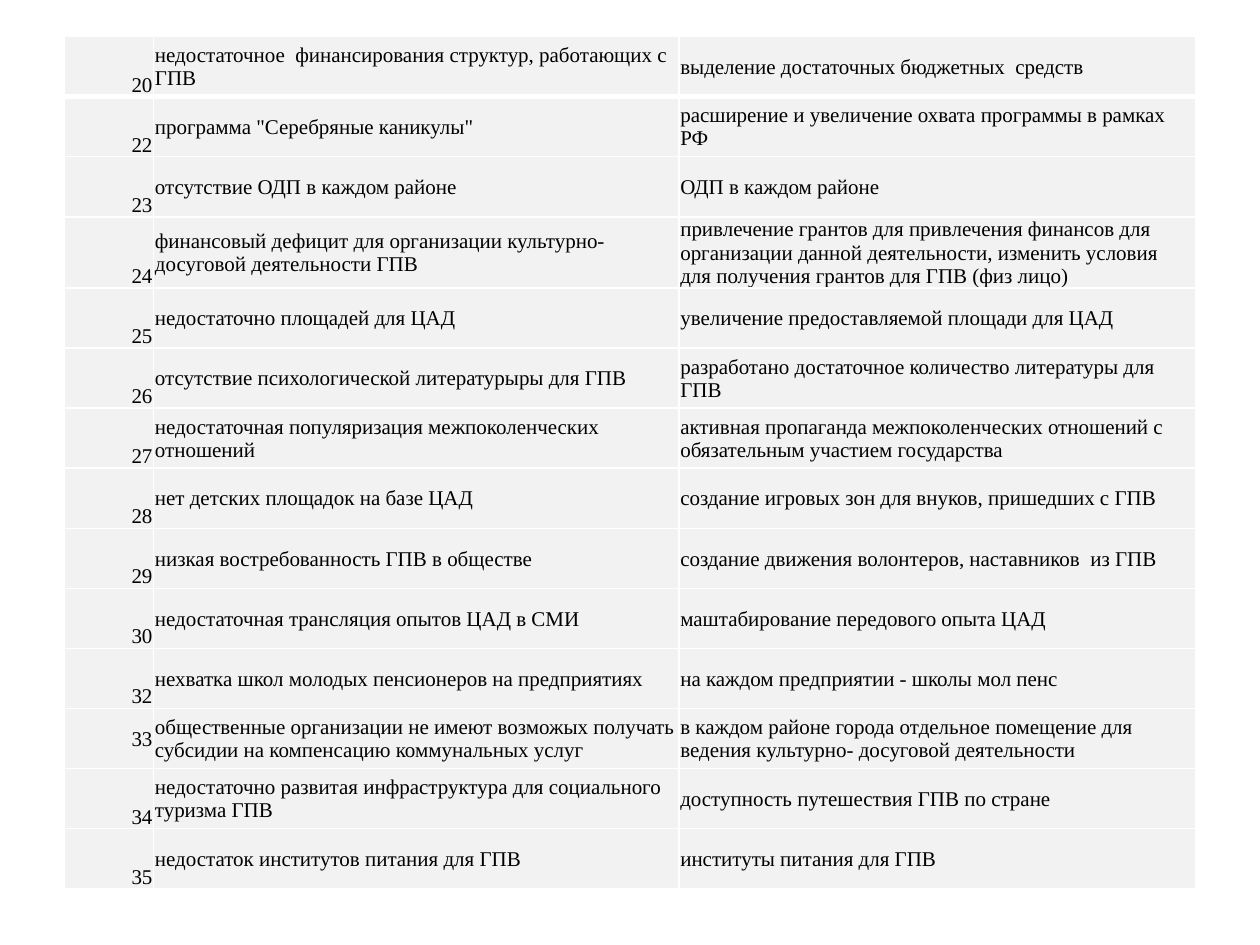
from lxml.etree import SubElement
from pptx import Presentation
from pptx.dml.color import RGBColor
from pptx.enum.text import MSO_ANCHOR, PP_ALIGN
from pptx.oxml.ns import qn
from pptx.util import Inches, Pt

COLORS = {"text": "000000", "cell": "F2F2F2", "border": "FFFFFF"}
FONT = "Times New Roman"
COL_WIDTHS = [0.71, 4.17, 4.1]
TABLE_HEIGHT = 6.76
TALL_ROW, TALL_HEIGHT = 3, 0.56
MIDDLE_NUMBER = "33"
ROWS = [
    ("20", "недостаточное  финансирования структур, работающих с ГПВ",
     "выделение достаточных бюджетных  средств"),
    ("22", 'программа "Серебряные каникулы"',
     "расширение и увеличение охвата программы в рамках РФ"),
    ("23", "отсутствие ОДП в каждом районе", "ОДП в каждом районе"),
    ("24", "финансовый дефицит для организации культурно- досуговой деятельности ГПВ",
     "привлечение грантов для привлечения финансов для организации данной деятельности, "
     "изменить условия для получения грантов для ГПВ (физ лицо)"),
    ("25", "недостаточно площадей для ЦАД",
     "увеличение предоставляемой площади для ЦАД"),
    ("26", "отсутствие психологической литературыры для ГПВ",
     "разработано достаточное количество литературы для ГПВ"),
    ("27", "недостаточная популяризация межпоколенческих отношений",
     "активная пропаганда межпоколенческих отношений с обязательным участием государства"),
    ("28", "нет детских площадок на базе ЦАД",
     "создание игровых зон для внуков, пришедших с ГПВ"),
    ("29", "низкая востребованность ГПВ в обществе",
     "создание движения волонтеров, наставников  из ГПВ"),
    ("30", "недостаточная трансляция опытов ЦАД в СМИ",
     "маштабирование передового опыта ЦАД"),
    ("32", "нехватка школ молодых пенсионеров на предприятиях",
     "на каждом предприятии - школы мол пенс"),
    ("33", "общественные организации не имеют возможых получать субсидии "
     "на компенсацию коммунальных услуг",
     "в каждом районе города отдельное помещение для  ведения культурно- "
     "досуговой деятельности"),
    ("34", "недостаточно развитая инфраструктура для социального туризма ГПВ",
     "доступность путешествия ГПВ по стране"),
    ("35", "недостаток институтов питания для ГПВ", "институты питания для ГПВ"),
]


def write_text(tf, text, size=12, color="text", align=PP_ALIGN.LEFT):
    p = tf.paragraphs[0]
    p.alignment = align
    r = p.add_run()
    r.text = text
    r.font.name = FONT
    r.font.size = Pt(size)
    r.font.color.rgb = RGBColor.from_string(COLORS[color])


class SlideBuilder:
    """Holds the table style and the current slide."""

    def __init__(self, prs):
        self.s = prs.slides.add_slide(prs.slide_layouts[6])

    def border(self, cell, side, width):
        ln = SubElement(cell._tc.get_or_add_tcPr(), qn(f"a:ln{side}"), w=str(Pt(width)))
        fill = SubElement(ln, qn("a:solidFill"))
        SubElement(fill, qn("a:srgbClr"), val=COLORS["border"])

    def cell(self, cell, text, align, anchor, widths):
        cell.margin_left = cell.margin_right = cell.margin_top = Inches(0.01)
        cell.margin_bottom = 0
        cell.vertical_anchor = anchor
        for side, width in widths.items():
            self.border(cell, side, width)
        cell.fill.solid()
        cell.fill.fore_color.rgb = RGBColor.from_string(COLORS["cell"])
        write_text(cell.text_frame, text, align=align)

    def table(self, left, top, rows):
        sp = self.s.shapes.add_table(len(rows), len(COL_WIDTHS), Inches(left), Inches(top),
                                     Inches(sum(COL_WIDTHS)), Inches(TABLE_HEIGHT))
        table = sp.table
        for col, width in zip(table.columns, COL_WIDTHS):
            col.width = Inches(width)
        row_height = (TABLE_HEIGHT - TALL_HEIGHT) / (len(rows) - 1)
        for i, row in enumerate(rows):
            table.rows[i].height = Inches(TALL_HEIGHT if i == TALL_ROW else row_height)
            widths = {"L": 1, "R": 1, "T": 3 if i == 1 else 1, "B": 3 if i == 0 else 1}
            for j, text in enumerate(row):
                low = j == 0 and text != MIDDLE_NUMBER
                self.cell(table.cell(i, j), text,
                          PP_ALIGN.RIGHT if j == 0 else PP_ALIGN.LEFT,
                          MSO_ANCHOR.BOTTOM if low else MSO_ANCHOR.MIDDLE, widths)


def main():
    prs = Presentation()
    prs.slide_width, prs.slide_height = Inches(10), Inches(7.5)
    SlideBuilder(prs).table(0.51, 0.29, ROWS)
    prs.save("out.pptx")


if __name__ == "__main__":
    main()
